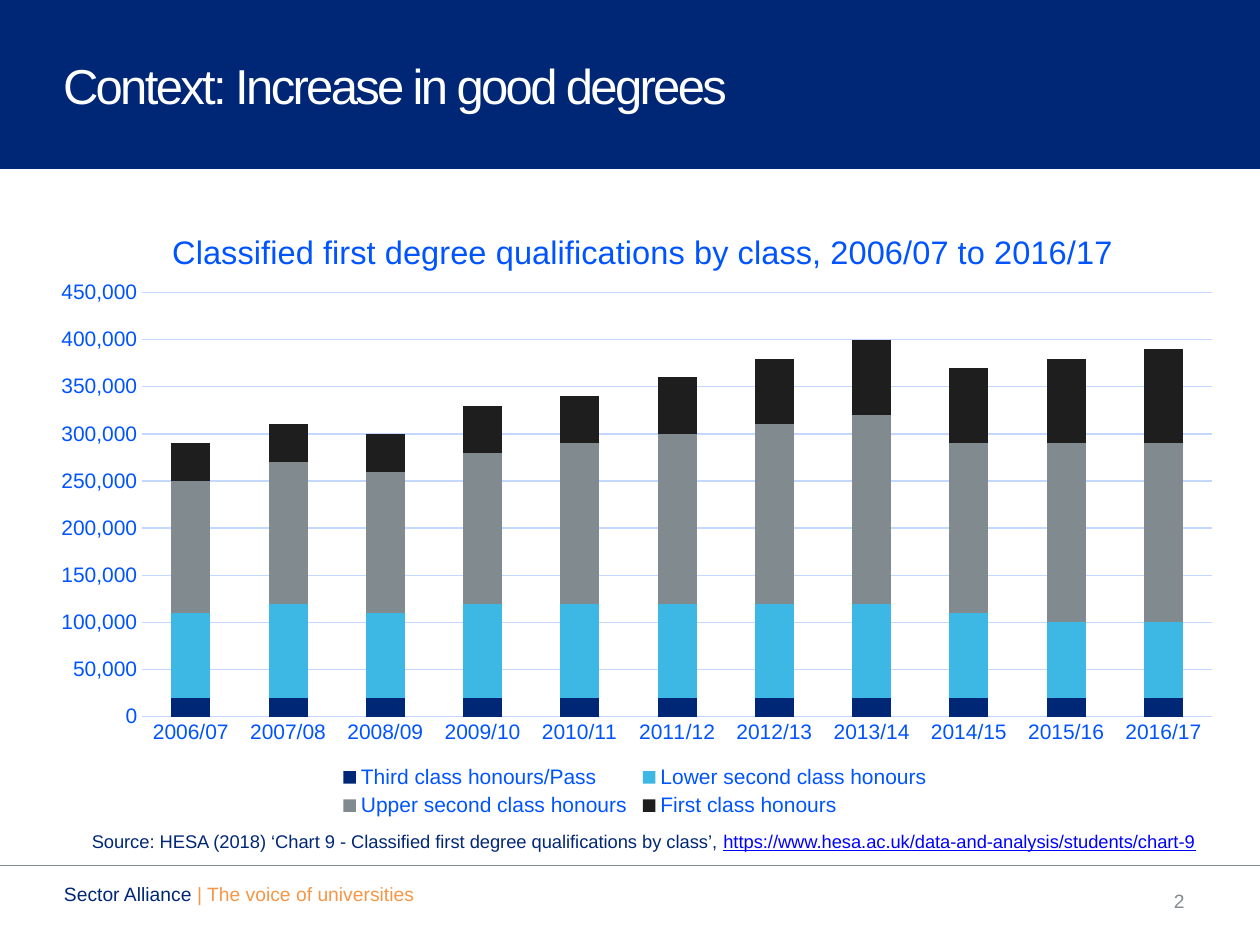
from dataclasses import dataclass

from lxml import etree
from pptx import Presentation
from pptx.chart.data import CategoryChartData
from pptx.dml.color import RGBColor
from pptx.enum.chart import XL_CHART_TYPE, XL_LEGEND_POSITION, XL_TICK_MARK
from pptx.enum.shapes import MSO_CONNECTOR, MSO_SHAPE
from pptx.enum.text import MSO_ANCHOR, PP_ALIGN
from pptx.oxml.ns import qn
from pptx.util import Inches, Pt

STACKED = XL_CHART_TYPE.COLUMN_STACKED
BOTTOM = XL_LEGEND_POSITION.BOTTOM
NO_TICK = XL_TICK_MARK.NONE
STRAIGHT = MSO_CONNECTOR.STRAIGHT
RECTANGLE = MSO_SHAPE.RECTANGLE
TOP, MIDDLE = MSO_ANCHOR.TOP, MSO_ANCHOR.MIDDLE
LEFT, RIGHT = PP_ALIGN.LEFT, PP_ALIGN.RIGHT

NAVY = RGBColor(0x00, 0x27, 0x76)
SKY = RGBColor(0x3D, 0xB7, 0xE4)
GREY = RGBColor(0x81, 0x8A, 0x8F)
BLACK = RGBColor(0x1E, 0x1E, 0x1E)
BLUE = RGBColor(0x00, 0x54, 0xFF)
PALE_BLUE = RGBColor(0xC4, 0xD8, 0xFF)
LINK_BLUE = RGBColor(0x00, 0x00, 0xFF)
ORANGE = RGBColor(0xF7, 0x96, 0x46)
WHITE = RGBColor(0xFF, 0xFF, 0xFF)

FONT = "Arial"
WIDTH, HEIGHT = Inches(10), Inches(7.5)
FOOTER_TOP, FOOTER_HEIGHT = 6.95, 0.4


@dataclass(frozen=True)
class Place:
    """A frame in inches."""
    left: float
    top: float
    width: float
    height: float

    def lengths(self) -> list:
        return [Inches(n) for n in (self.left, self.top, self.width, self.height)]


@dataclass(frozen=True)
class DegreeClass:
    """One chart series, with graduates in tens of thousands."""
    name: str
    color: RGBColor
    counts: tuple


YEARS = [f"{year}/{(year + 1) % 100:02}" for year in range(2006, 2017)]
DEGREE_CLASSES = [
    DegreeClass("Third class honours/Pass", NAVY, (2,) * len(YEARS)),
    DegreeClass("Lower second class honours", SKY,
                (9, 10, 9, 10, 10, 10, 10, 10, 9, 8, 8)),
    DegreeClass("Upper second class honours", GREY,
                (14, 15, 15, 16, 17, 18, 19, 20, 18, 19, 19)),
    DegreeClass("First class honours", BLACK,
                (4, 4, 4, 5, 5, 6, 7, 8, 8, 9, 10)),
]


def style_font(font, size: float, color: RGBColor) -> None:
    font.name = FONT
    font.size = Pt(size)
    font.bold = False
    font.color.rgb = color


def add_text(para, text: str, *, size: float, color: RGBColor,
             underline: bool = False, spacing: float = 0) -> None:
    span = para.add_run()
    span.text = text
    style_font(span.font, size, color)
    if underline:
        span.font.underline = True
    if spacing:
        span.font._element.set("spc", str(int(spacing * 100)))


def add_text_box(page, place: Place, *, anchor=TOP, align=LEFT, wrap: bool = True):
    """Add an empty text box and return its first paragraph."""
    frame = page.shapes.add_textbox(*place.lengths()).text_frame
    frame.word_wrap = wrap
    frame.vertical_anchor = anchor
    para = frame.paragraphs[0]
    para.alignment = align
    return para


def set_layout(part, *, inner: bool = False, **shares: float) -> None:
    """Place a chart part by its shares (x, y, w, h) of the chart's size."""
    for old in part.findall(qn("c:layout")):
        part.remove(old)
    layout = etree.Element(qn("c:layout"))
    manual = etree.SubElement(layout, qn("c:manualLayout"))
    if inner:
        etree.SubElement(manual, qn("c:layoutTarget")).set("val", "inner")
    for key in ("x", "y"):
        etree.SubElement(manual, qn(f"c:{key}Mode")).set("val", "edge")
    for key, share in shares.items():
        etree.SubElement(manual, qn(f"c:{key}")).set("val", str(share))
    overlay = part.find(qn("c:overlay"))
    part.insert(0 if overlay is None else part.index(overlay), layout)


def style_axis(axis) -> None:
    axis.major_tick_mark = axis.minor_tick_mark = NO_TICK
    style_font(axis.tick_labels.font, 12, BLUE)


def style_line(line, color: RGBColor) -> None:
    line.color.rgb = color
    line.width = Pt(0.75)


def add_degree_chart(page, place: Place) -> None:
    data = CategoryChartData(number_format="#,##0")
    data.categories = YEARS
    for degree in DEGREE_CLASSES:
        data.add_series(degree.name, [count * 10_000 for count in degree.counts])
    chart = page.shapes.add_chart(STACKED, *place.lengths(), data).chart
    style_font(chart.font, 10, NAVY)

    # Columns
    plot = chart.plots[0]
    plot.gap_width, plot.overlap, plot.vary_by_categories = 150, 100, False
    for series, degree in zip(plot.series, DEGREE_CLASSES):
        series.format.fill.solid()
        series.format.fill.fore_color.rgb = degree.color

    # Axes
    years, graduates = chart.category_axis, chart.value_axis
    style_axis(years)
    style_axis(graduates)
    style_line(years.format.line, PALE_BLUE)
    graduates.format.line.fill.background()
    style_line(graduates.major_gridlines.format.line, PALE_BLUE)
    graduates.minimum_scale, graduates.maximum_scale = 0, 450_000
    graduates.major_unit = 50_000
    graduates.tick_labels.number_format = "#,##0"
    graduates.tick_labels.number_format_is_linked = False

    # Title and legend
    add_text(chart.chart_title.text_frame.paragraphs[0],
             "Classified first degree qualifications by class, 2006/07 to 2016/17",
             size=18.6, color=BLUE)
    chart.has_legend = True
    chart.legend.position = BOTTOM
    chart.legend.include_in_layout = False
    style_font(chart.legend.font, 12, BLUE)

    set_layout(chart.chart_title._element, x=0.11, y=0.04)
    set_layout(chart._chartSpace.chart.plotArea, inner=True,
               x=0.09, y=0.15, w=0.89, h=0.68)
    set_layout(chart.legend._element, x=0.25, y=0.9, w=0.5, h=0.1)


def main() -> None:
    deck = Presentation()
    deck.slide_width, deck.slide_height = WIDTH, HEIGHT
    page = deck.slides.add_slide(deck.slide_layouts[5])

    # Footer rule and title band
    rule = page.shapes.add_connector(STRAIGHT, 0, Inches(6.87), WIDTH, Inches(6.87))
    style_line(rule.line, GREY)
    etree.SubElement(rule._element.spPr, qn("a:effectLst"))
    band = page.shapes.add_shape(RECTANGLE, 0, 0, WIDTH, Inches(1.34))
    band.shadow.inherit = False
    band.fill.solid()
    band.fill.fore_color.rgb = NAVY
    band.line.fill.background()

    add_degree_chart(page, Place(0.27, 1.58, 9.54, 4.95))

    # Footer and source
    number = add_text_box(page, Place(7.17, FOOTER_TOP, 2.33, FOOTER_HEIGHT),
                          anchor=MIDDLE, align=RIGHT)
    add_text(number, "2", size=11, color=GREY)
    footer = add_text_box(page, Place(0.41, FOOTER_TOP, 3.17, FOOTER_HEIGHT))
    add_text(footer, "Sector Alliance ", size=11, color=NAVY)
    add_text(footer, "| The voice of universities", size=11, color=ORANGE)
    source = add_text_box(page, Place(0.63, 6.54, 9.25, 0.28), wrap=False)
    add_text(source, "Source: HESA (2018) ‘Chart 9 - Classified first degree "
             "qualifications by class’, ", size=10.5, color=NAVY)
    add_text(source, "https://www.hesa.ac.uk/data-and-analysis/students/chart-9",
             size=10.5, color=LINK_BLUE, underline=True)

    # Title, brought in front of its band
    title = page.shapes.title
    title.left, title.top, title.width, title.height = Place(0.5, 0.19, 6.01, 0.97).lengths()
    frame = title.text_frame
    frame.margin_left = 0
    frame.vertical_anchor = MIDDLE
    frame.paragraphs[0].alignment = LEFT
    add_text(frame.paragraphs[0], "Context: Increase in good degrees",
             size=28, color=WHITE, spacing=-1.5)
    page.shapes._spTree.append(title._element)

    deck.save("out.pptx")


if __name__ == "__main__":
    main()
